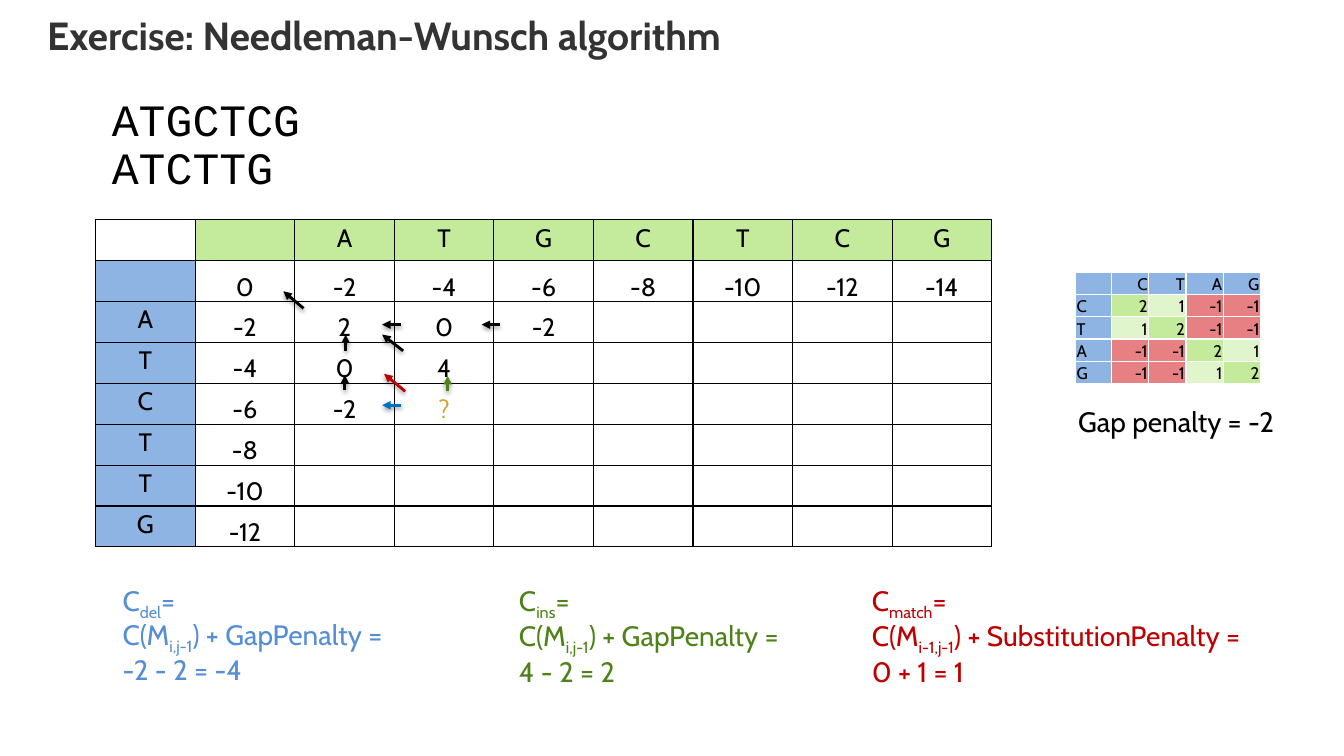
import dataclasses
import typing

import pptx
import pptx.dml.color
import pptx.enum.shapes
import pptx.enum.text
import pptx.oxml
import pptx.oxml.ns
import pptx.util
from lxml import etree

Cm = pptx.util.Cm
Pt = pptx.util.Pt
RGBColor = pptx.dml.color.RGBColor
Align = pptx.enum.text.PP_ALIGN
Anchor = pptx.enum.text.MSO_ANCHOR
qn = pptx.oxml.ns.qn

BLACK = RGBColor(0x00, 0x00, 0x00)
WHITE = RGBColor(0xFF, 0xFF, 0xFF)
GREY = RGBColor(0x33, 0x33, 0x33)
HEAD_BLUE = RGBColor(0x8E, 0xB4, 0xE3)
LIME = RGBColor(0xC3, 0xEB, 0x9B)
PALE_LIME = RGBColor(0xE1, 0xF5, 0xCD)
ROSE = RGBColor(0xE7, 0x80, 0x82)
GOLD = RGBColor(0xD6, 0xA0, 0x26)
BLUE = RGBColor(0x00, 0x70, 0xC0)
SKY = RGBColor(0x55, 0x8E, 0xD5)
GREEN = RGBColor(0x4F, 0x83, 0x1A)
RED = RGBColor(0xC0, 0x00, 0x00)

TOP, SIDE, BASES = "ATGCTCG", "ATCTTG", "CTAG"
GAP = -2
SCORES = {(2, 2): "2", (2, 3): "0", (2, 4): "-2", (3, 2): "0",
          (3, 3): "4", (4, 2): "-2", (4, 3): "?"}
PAIRS = ["2 1 -1 -1", "1 2 -1 -1", "-1 -1 2 1", "-1 -1 1 2"]
PAIR_FILLS = {"2": LIME, "1": PALE_LIME, "-1": ROSE}
SHADOW = (
    '<a:effectLst xmlns:a="http://schemas.openxmlformats.org/drawingml/2006/main">'
    '<a:outerShdw blurRad="40000" dist="20000" dir="5400000" rotWithShape="0">'
    '<a:srgbClr val="000000"><a:alpha val="38000"/></a:srgbClr>'
    '</a:outerShdw></a:effectLst>'
)


@dataclasses.dataclass
class Cell:
    text: str
    fill: RGBColor
    size: int
    color: RGBColor = BLACK
    align: typing.Any = Align.CENTER
    tight: bool = True


@dataclasses.dataclass
class Arrow:
    x1: float
    y1: float
    x2: float
    y2: float
    color: RGBColor = BLACK


@dataclasses.dataclass
class Cost:
    left: float
    top: float
    sum_top: float
    width: float
    rule: str
    total: str
    color: RGBColor


ARROWS = [
    Arrow(7.65, 7.77, 7.14, 7.34),
    Arrow(10.11, 8.18, 9.63, 8.18),
    Arrow(10.16, 8.84, 9.63, 8.43),
    Arrow(8.71, 8.84, 8.71, 8.43),
    Arrow(8.69, 9.83, 8.69, 9.45),
    Arrow(12.6, 8.18, 12.14, 8.18),
    Arrow(10.11, 10.21, 9.63, 10.21, BLUE),
    Arrow(11.28, 9.86, 11.28, 9.47, GREEN),
    Arrow(10.21, 9.86, 9.68, 9.42, RED),
]
COSTS = [
    Cost(21.72, 14.6, 16.46, 11.1,
         "C_match_=\nC(M_i-1,j-1_) + SubstitutionPenalty =", "0 + 1 = 1", RED),
    Cost(12.83, 14.6, 16.46, 8.2,
         "C_ins_=\nC(M_i,j-1_) + GapPenalty =", "4 - 2 = 2", GREEN),
    Cost(2.84, 14.58, 16.41, 8.05,
         "C_del_=\nC(M_i,j-1_) + GapPenalty =", "-2 - 2 = -4", SKY),
]


def write(frame: typing.Any, text: str, *, size: int = 20, color: RGBColor = BLACK,
          font: str = "Cabin", bold: bool = False, align: typing.Any = Align.LEFT) -> None:
    """Fill a text frame; parts between underscores become subscripts."""
    for i, line in enumerate(text.split("\n")):
        para = frame.add_paragraph() if i else frame.paragraphs[0]
        para.alignment = align
        para.line_spacing = 0.9
        if not line:
            etree.SubElement(para._p, qn("a:endParaRPr"), sz=str(size * 100))
            continue
        for j, piece in enumerate(line.split("_")):
            run = para.add_run()
            run.text = piece
            run.font.size = Pt(size)
            run.font.name = font
            run.font.bold = bold
            run.font.color.rgb = color
            if j % 2:
                run._r.get_or_add_rPr().set("baseline", "-25000")


def add_text(slide: typing.Any, left: float, top: float, width: float, height: float,
             text: str, wrap: bool = True, inset: bool = True, **style: typing.Any) -> None:
    box = slide.shapes.add_textbox(Cm(left), Cm(top), Cm(width), Cm(height))
    frame = box.text_frame
    frame.word_wrap = wrap
    if not inset:
        frame.margin_left = frame.margin_right = frame.margin_top = frame.margin_bottom = 0
    write(frame, text, **style)


def add_edge(cell: typing.Any, color: RGBColor) -> None:
    """Put a thin border on all four sides of a cell."""
    props = cell._tc.get_or_add_tcPr()
    for side in ("lnL", "lnR", "lnT", "lnB"):
        line = etree.SubElement(props, qn(f"a:{side}"), w="12700")
        fill = etree.SubElement(line, qn("a:solidFill"))
        etree.SubElement(fill, qn("a:srgbClr"), val=str(color))


def add_grid(slide: typing.Any, left: float, top: float, widths: list[float],
             height: float, rows: list[list[Cell]], edge: RGBColor) -> None:
    frame = slide.shapes.add_table(len(rows), len(widths), Cm(left), Cm(top),
                                   Cm(sum(widths)), Cm(height * len(rows)))
    table = frame.table
    table.first_row = table.horz_banding = False
    for col, width in zip(table.columns, widths):
        col.width = Cm(width)
    for r, row in enumerate(rows):
        table.rows[r].height = Cm(height)
        for c, item in enumerate(row):
            cell = table.cell(r, c)
            add_edge(cell, edge)
            cell.fill.solid()
            cell.fill.fore_color.rgb = item.fill
            if item.tight:
                cell.vertical_anchor = Anchor.BOTTOM
                cell.margin_left = cell.margin_right = cell.margin_top = Cm(0.03)
                cell.margin_bottom = 0
            write(cell.text_frame, item.text, size=item.size, color=item.color,
                  align=item.align)


def score_cell(r: int, c: int) -> Cell:
    if r == 0:
        return Cell(("  " + TOP)[c].strip(), LIME if c else WHITE, 18, tight=False)
    if c == 0:
        return Cell((" " + SIDE)[r - 1].strip(), HEAD_BLUE, 18, tight=False)
    if r == 1 or c == 1:
        return Cell(str(GAP * (r + c - 2)), WHITE, 18)
    text = SCORES.get((r, c), "")
    return Cell(text, WHITE, 18, GOLD if text == "?" else BLACK)


def pair_rows() -> list[list[Cell]]:
    rows = [[Cell(base, HEAD_BLUE, 12, align=Align.RIGHT) for base in ["", *BASES]]]
    for base, line in zip(BASES, PAIRS):
        head = Cell(base, HEAD_BLUE, 12, align=Align.LEFT)
        rows.append([head] + [Cell(n, PAIR_FILLS[n], 12, align=Align.RIGHT)
                              for n in line.split()])
    return rows


def add_arrow(slide: typing.Any, arrow: Arrow) -> None:
    line = slide.shapes.add_connector(
        pptx.enum.shapes.MSO_CONNECTOR.STRAIGHT,
        Cm(arrow.x1), Cm(arrow.y1), Cm(arrow.x2), Cm(arrow.y2))
    line.line.color.rgb = arrow.color
    line.line.width = Pt(2)
    props = line._element.spPr
    etree.SubElement(props.find(qn("a:ln")), qn("a:tailEnd"), type="triangle")
    props.append(pptx.oxml.parse_xml(SHADOW))


def main() -> None:
    deck = pptx.Presentation()
    deck.slide_width, deck.slide_height = Cm(33.87), Cm(19.05)
    slide = deck.slides.add_slide(deck.slide_layouts[6])
    add_text(slide, 1.19, 0.41, 28.65, 2.29, "Exercise: Needleman-Wunsch algorithm",
             inset=False, size=28, color=GREY, bold=True)
    scores = [[score_cell(r, c) for c in range(len(TOP) + 2)]
              for r in range(len(SIDE) + 2)]
    add_grid(slide, 2.41, 5.54, [2.51] * 9, 1.03, scores, BLACK)
    add_text(slide, 2.57, 2.34, 5.31, 2.74, f"{TOP}\n{SIDE}", wrap=False,
             size=32, font="Courier New")
    add_grid(slide, 27.1, 6.86, [0.91] + [0.94] * 4, 0.56, pair_rows(), WHITE)
    add_text(slide, 26.92, 10.16, 5.87, 1.02, f"Gap penalty = {GAP}", wrap=False)
    for arrow in ARROWS:
        add_arrow(slide, arrow)
    for cost in COSTS:
        add_text(slide, cost.left, cost.top, cost.width, 1.8, cost.rule, color=cost.color)
        add_text(slide, cost.left, cost.sum_top, cost.width, 1.02, cost.total,
                 color=cost.color)
    deck.save("out.pptx")


if __name__ == "__main__":
    main()
